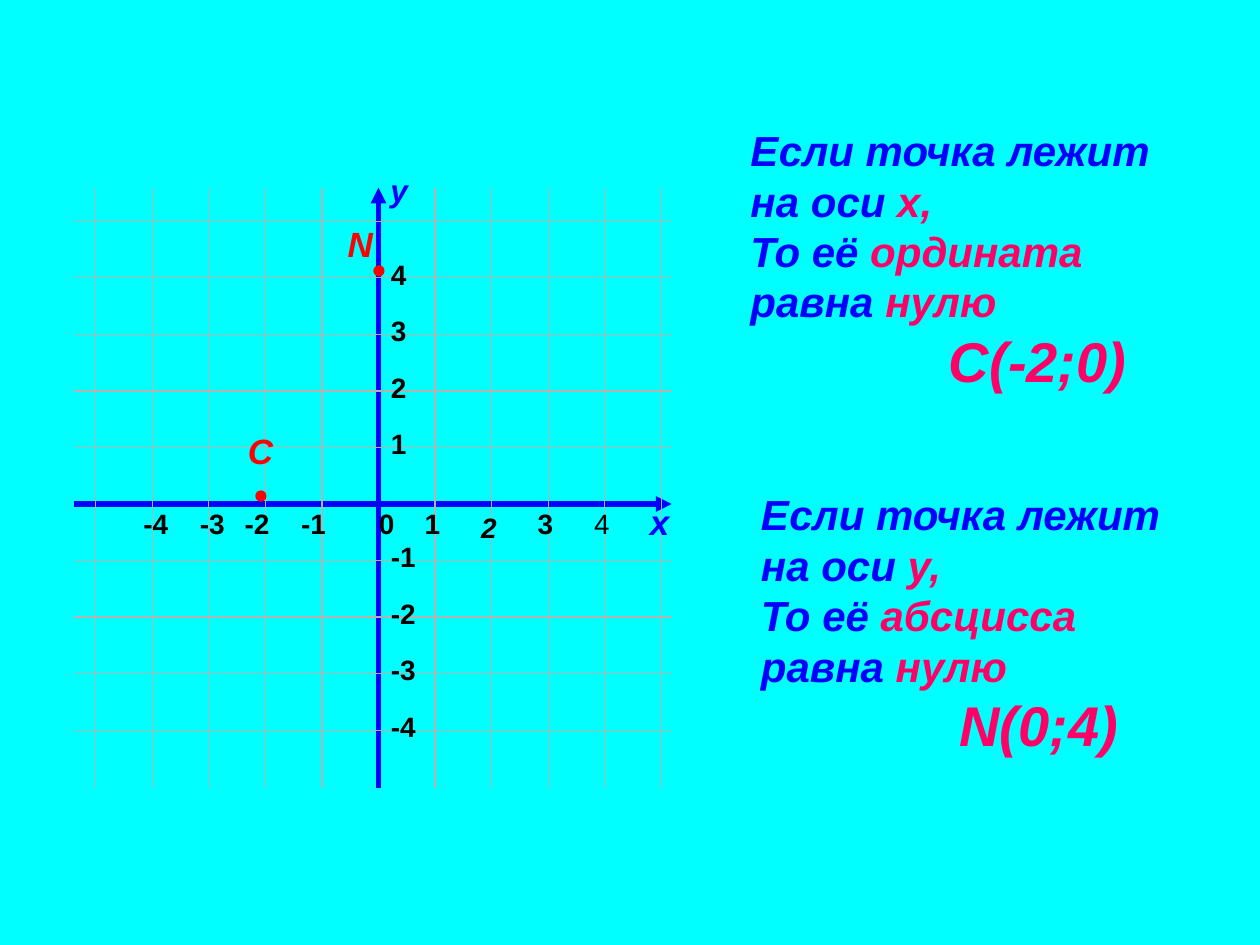
"""Build a slide on points that lie on the coordinate axes."""
import pptx
import pptx.dml.color
import pptx.enum.shapes
import pptx.oxml
import pptx.oxml.ns
import pptx.util

Cm = pptx.util.Cm
Pt = pptx.util.Pt
RGB = pptx.dml.color.RGBColor
CYAN = RGB(0x00, 0xFF, 0xFF)
BLUE = RGB(0x00, 0x00, 0xFF)
BLACK = RGB(0x00, 0x00, 0x00)
RED = RGB(0xFF, 0x00, 0x00)
PINK = RGB(0xFF, 0x00, 0x66)
GREY = RGB(0xB2, 0xB2, 0xB2)

RULES = [
    (14.88, 2.39, 9.12, [
        [("Если точка лежит", BLUE)],
        [("на оси ", BLUE), ("x,", PINK)],
        [("То её ", BLUE), ("ордината", PINK)],
        [("равна", BLUE), (" нулю", PINK)]], "C(-2;0)"),
    (15.09, 9.73, 8.92, [
        [("Если точка лежит", BLUE)],
        [("на оси ", BLUE), ("y,", PINK)],
        [("То её ", BLUE), ("абсцисса", PINK)],
        [("равна ", BLUE), ("нулю", PINK)]], "N(0;4)"),
]
POINTS = [("C", 5.16, 9.9, 4.75, 8.53), ("N", 7.54, 5.36, 6.76, 4.37)]
NAMES = [("y", 7.62, 3.33, 18), ("x", 12.85, 9.96, 20)]
TICKS = [-4, -3, -2, -1, 1, 2, 3, 4]
SHIFT = {-4: -0.43, -3: -0.43, -2: -0.67, -1: -0.67}
STYLE = {2: {"italic": True, "drop": 0.08}, 4: {"bold": False}}

X0, Y0, STEP = 7.63, 10.16, 1.14
LEFT, RIGHT, TOP, BASE = 1.5, 13.54, 3.78, 15.88

deck = pptx.Presentation()
deck.slide_width, deck.slide_height = Cm(25.4), Cm(19.05)
slide = deck.slides.add_slide(deck.slide_layouts[6])
slide.background.fill.solid()
slide.background.fill.fore_color.rgb = CYAN


def write(text, x, y, w=1.1, h=1.1, size=16, color=BLACK, bold=True,
          italic=False, wrap=False, last=None):
    """Place text, a string or rows of coloured runs, with an indented last row."""
    rows = [[(text, color)]] if isinstance(text, str) else list(text)
    if last:
        rows.append([(last, PINK)])
    frame = slide.shapes.add_textbox(Cm(x), Cm(y), Cm(w), Cm(h)).text_frame
    frame.word_wrap = wrap
    for i, row in enumerate(rows):
        para = frame.paragraphs[0] if i == 0 else frame.add_paragraph()
        final = last and i == len(rows) - 1
        if final:
            para._p.get_or_add_pPr().set("marL", str(Cm(4)))
        for part, tint in row:
            run = para.add_run()
            run.text = part
            font = run.font
            font.name, font.bold, font.italic = "Arial", bold, italic
            font.size = Pt(32 if final else size)
            font.color.rgb = tint


def rule(x1, y1, x2, y2, color=GREY, width=0.75, arrow=False):
    """Draw a straight line, with an arrowhead at its end on request."""
    line = slide.shapes.add_connector(
        pptx.enum.shapes.MSO_CONNECTOR.STRAIGHT, Cm(x1), Cm(y1), Cm(x2), Cm(y2))
    line.line.color.rgb, line.line.width = color, Pt(width)
    if arrow:
        ns = pptx.oxml.ns.nsdecls("a")
        line.line._get_or_add_ln().append(
            pptx.oxml.parse_xml(f'<a:tailEnd {ns} type="triangle"/>'))
    props = line._element.spPr
    props.append(props.makeelement(pptx.oxml.ns.qn("a:effectLst"), {}))


def dot(x, y, size=0.2):
    """Mark a point."""
    mark = slide.shapes.add_shape(
        pptx.enum.shapes.MSO_SHAPE.OVAL, Cm(x), Cm(y), Cm(size), Cm(size))
    mark.shadow.inherit = False
    mark.fill.solid()
    mark.fill.fore_color.rgb = mark.line.color.rgb = RED
    mark.line.width = Pt(0.75)


rule(LEFT, Y0, RIGHT, Y0, BLUE, 3, True)
rule(X0, BASE, X0, TOP, BLUE, 3, True)
for k in range(-5, 6):
    if k:
        x, y = X0 + k * STEP, Y0 - k * STEP
        rule(x, BASE, x, TOP, width=0.5 if k == -5 else 0.75)
        if k > -5:
            rule(LEFT, y, RIGHT, y)

for k in TICKS:
    style = dict(STYLE.get(k, {}))
    drop = style.pop("drop", 0)
    write(str(k), X0 + k * STEP + SHIFT.get(k, -0.46), Y0 - 0.08 + drop, **style)
    write(str(k), X0, Y0 - k * STEP - 0.54)
write("0", 7.39, Y0 - 0.08)
for name, x, y, size in NAMES:
    write(name, x, y, size=size, color=BLUE, italic=True)
for name, x, y, left, top in POINTS:
    dot(x, y)
    write(name, left, top, size=20, color=RED, italic=True)
for x, y, w, rows, last in RULES:
    write(rows, x, y, w, 5.74, size=24, italic=True, wrap=True, last=last)

deck.save("out.pptx")
